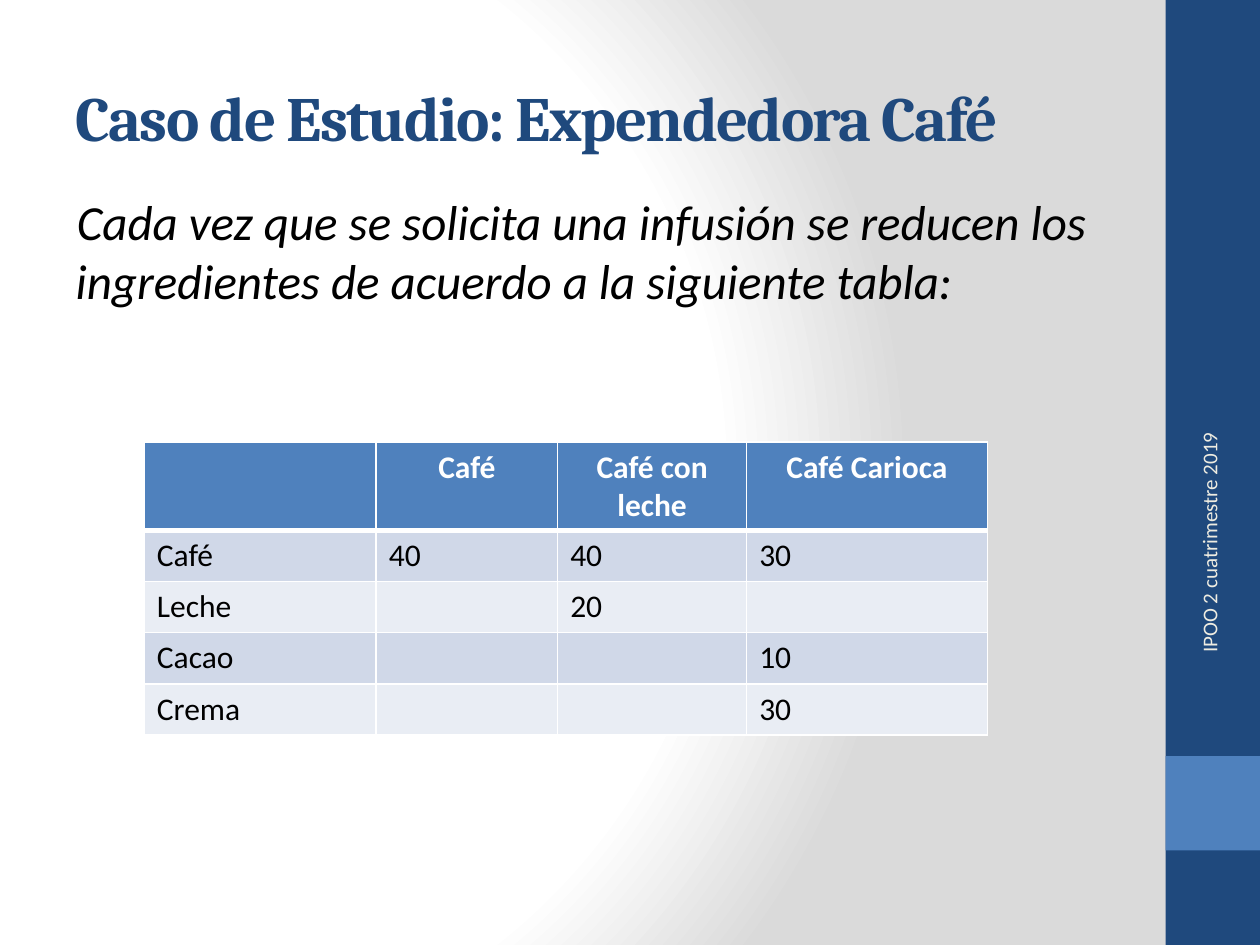
"""Build the slide on the coffee vending machine case study."""
from dataclasses import dataclass

from lxml import etree
from pptx import Presentation, util as u
from pptx.dml.color import RGBColor
from pptx.enum import shapes, text
from pptx.oxml import ns, parse_xml

TITLE = "Caso de Estudio: Expendedora Café"
INTRO = ("Cada vez que se solicita una infusión se reducen los "
         "ingredientes de acuerdo a la siguiente tabla:")
FOOTER = "IPOO 2 cuatrimestre 2019"
RECIPES = [
    ["", "Café", "Café con leche", "Café Carioca"],
    ["Café", "40", "40", "30"],
    ["Leche", "", "20", ""],
    ["Cacao", "", "", "10"],
    ["Crema", "", "", "30"],
]
COLUMN_WIDTHS = [132.5, 103.7, 108, 137.5]
HEADER_HEIGHT, ROW_HEIGHT = 50.4, 29.2
PAGE_WIDTH, PAGE_HEIGHT, BAND = 720, 540, 54


@dataclass(frozen=True)
class Theme:
    navy: str = "1F497D"
    blue: str = "4F81BD"
    cream: str = "EEECE1"
    white: str = "FFFFFF"
    black: str = "000000"
    grey: str = "DADADA"
    bands: tuple = ("D0D8E8", "E9EDF4")
    heading: str = "Cambria"
    body: str = "Calibri"
    title_size: int = 36
    intro_size: int = 28
    table_size: int = 18
    footer_size: int = 12


THEME = Theme()


def place(shape, left, top, width, height):
    shape.left, shape.top = u.Pt(left), u.Pt(top)
    shape.width, shape.height = u.Pt(width), u.Pt(height)


def write(para, words, size, color, face=THEME.body, bold=False, italic=False):
    span = para.add_run()
    span.text = words
    font = span.font
    font.size, font.name, font.bold, font.italic = u.Pt(size), face, bold, italic
    font.color.rgb = RGBColor.from_string(color)
    return span


def paint_background(page):
    stops = "".join(
        f'<a:gs pos="{percent * 1000}"><a:srgbClr val="{color}"/></a:gs>'
        for percent, color in ((0, THEME.white), (75, THEME.white), (100, THEME.grey)))
    page.element.cSld.insert(0, parse_xml(
        f'<p:bg {ns.nsdecls("p", "a")}><p:bgPr><a:gradFill rotWithShape="1">'
        f'<a:gsLst>{stops}</a:gsLst><a:path path="circle">'
        '<a:fillToRect l="20000" t="50000" r="100000" b="50000"/></a:path>'
        '</a:gradFill><a:effectLst/></p:bgPr></p:bg>'))


def add_band(page, top, height, color):
    band = page.shapes.add_shape(
        shapes.MSO_SHAPE.RECTANGLE, u.Pt(PAGE_WIDTH - BAND), u.Pt(top),
        u.Pt(BAND), u.Pt(height))
    band.shadow.inherit = False
    band.fill.solid()
    band.fill.fore_color.rgb = RGBColor.from_string(color)
    band.line.fill.background()


def fill_title(box):
    place(box, 36, 21.6, 600, 90)
    frame = box.text_frame
    frame.vertical_anchor = text.MSO_ANCHOR.MIDDLE
    frame.auto_size = text.MSO_AUTO_SIZE.NONE
    para = frame.paragraphs[0]
    para.alignment = text.PP_ALIGN.LEFT
    span = write(para, TITLE, THEME.title_size, THEME.navy, THEME.heading, bold=True)
    span.font._element.set("spc", "-100")


def fill_intro(box):
    place(box, 8.64, 105.84, 646.56, 77)
    box.text_frame.auto_size = text.MSO_AUTO_SIZE.NONE
    para = box.text_frame.paragraphs[0]
    props = para._p.get_or_add_pPr()
    props.set("marL", str(u.Pt(27.36)))
    props.set("indent", str(u.Pt(0.72)))
    etree.SubElement(props, ns.qn("a:buNone"))
    write(para, INTRO, THEME.intro_size, THEME.black, italic=True)


def add_footer(page):
    box = page.shapes.add_textbox(0, 0, 0, 0)
    place(box, 597.6, 318.96, 186.48, 28.8)
    box.rotation = 270
    frame = box.text_frame
    frame.word_wrap = True
    frame.vertical_anchor = text.MSO_ANCHOR.MIDDLE
    para = frame.paragraphs[0]
    para.alignment = text.PP_ALIGN.RIGHT
    write(para, FOOTER, THEME.footer_size, THEME.cream)


def border_cell(cell, bottom):
    props = cell._tc.get_or_add_tcPr()
    widths = {"lnL": 1, "lnR": 1, "lnT": 1, "lnB": bottom}
    for index, (side, width) in enumerate(widths.items()):
        props.insert(index, parse_xml(
            f'<a:{side} {ns.nsdecls("a")} w="{u.Pt(width)}"><a:solidFill>'
            f'<a:srgbClr val="{THEME.white}"/></a:solidFill></a:{side}>'))


def add_recipes(page):
    heights = [HEADER_HEIGHT] + [ROW_HEIGHT] * (len(RECIPES) - 1)
    table = page.shapes.add_table(
        len(RECIPES), len(COLUMN_WIDTHS), u.Pt(82.5), u.Pt(252.72),
        u.Pt(sum(COLUMN_WIDTHS)), u.Pt(sum(heights))).table
    for column, width in zip(table.columns, COLUMN_WIDTHS):
        column.width = u.Pt(width)
    for number, (row, height, words) in enumerate(zip(table.rows, heights, RECIPES)):
        row.height = u.Pt(height)
        header = number == 0
        fill = THEME.blue if header else THEME.bands[(number - 1) % 2]
        for cell, word in zip(row.cells, words):
            cell.fill.solid()
            cell.fill.fore_color.rgb = RGBColor.from_string(fill)
            border_cell(cell, 3 if header else 1)
            para = cell.text_frame.paragraphs[0]
            para.alignment = text.PP_ALIGN.CENTER if header else text.PP_ALIGN.LEFT
            if word:
                write(para, word, THEME.table_size,
                      THEME.white if header else THEME.black, bold=header)


def main():
    deck = Presentation()
    deck.slide_width, deck.slide_height = u.Pt(PAGE_WIDTH), u.Pt(PAGE_HEIGHT)
    page = deck.slides.add_slide(deck.slide_layouts[1])
    paint_background(page)
    add_band(page, 0, PAGE_HEIGHT, THEME.navy)
    add_band(page, 432, BAND, THEME.blue)
    fill_title(page.shapes.title)
    fill_intro(page.placeholders[1])
    add_footer(page)
    add_recipes(page)
    deck.save("out.pptx")


if __name__ == "__main__":
    main()
